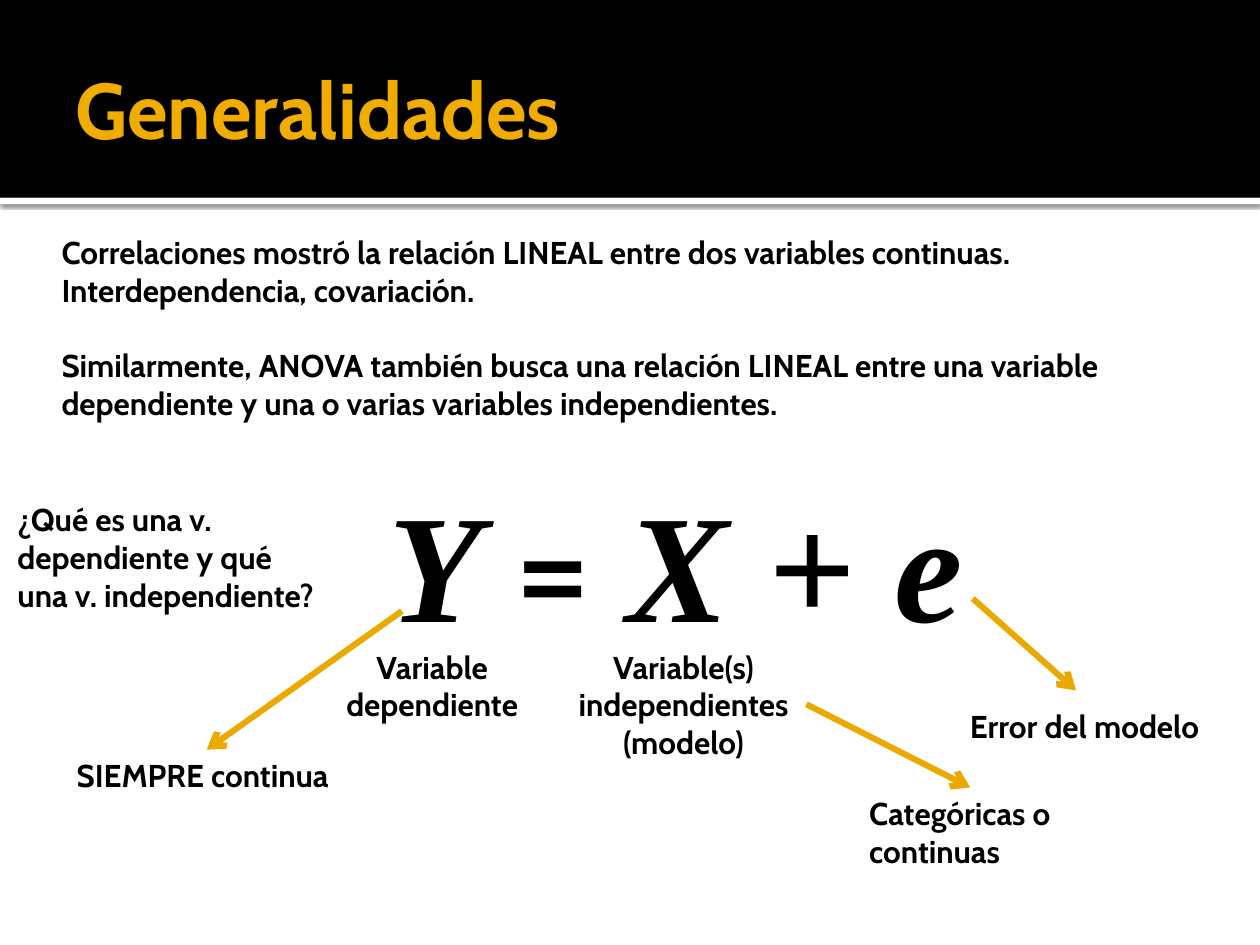
"""Build the slide on the general linear model Y = X + e."""
import lxml.etree
import pptx
import pptx.dml.color
import pptx.enum.shapes
import pptx.enum.text
import pptx.oxml
import pptx.oxml.ns
import pptx.util

Inches = pptx.util.Inches
Pt = pptx.util.Pt
LEFT = pptx.enum.text.PP_ALIGN.LEFT
CENTER = pptx.enum.text.PP_ALIGN.CENTER
BODY = {"name": "Cabin", "size": Pt(18), "bold": True}
TITLE = {**BODY, "size": Pt(45)}
SYMBOL = {"name": "Times New Roman", "size": Pt(88), "bold": True, "italic": True}
EQUALS = {"name": "Cabin", "size": Pt(88), "bold": False, "italic": False}


def color(value):
    return pptx.dml.color.RGBColor.from_string(value)


def add_text(box, paragraphs, alignment=LEFT, text_color="000000", gaps=()):
    shape = slide.shapes.add_textbox(*map(Inches, box))
    frame = shape.text_frame
    frame.word_wrap = True
    for index, runs in enumerate(paragraphs):
        paragraph = frame.add_paragraph() if index else frame.paragraphs[0]
        paragraph.alignment = alignment
        if index in gaps:
            paragraph.space_before = Pt(21.5)
        for text, formats in runs:
            run = paragraph.add_run()
            run.text = text
            run.font.color.rgb = color(text_color)
            for name, value in formats.items():
                setattr(run.font, name, value)
    return frame


presentation = pptx.Presentation()
presentation.slide_width = Inches(10)
presentation.slide_height = Inches(7.5)
slide = presentation.slides.add_slide(presentation.slide_layouts[6])

for top, height, fill in [(1.57, 0.05, "FFFFFF"), (0, 1.57, "000000")]:
    band = slide.shapes.add_shape(
        pptx.enum.shapes.MSO_SHAPE.RECTANGLE, 0, Inches(top), Inches(10), Inches(height)
    )
    band.shadow.inherit = False
    band.fill.solid()
    band.fill.fore_color.rgb = color(fill)
    band.line.fill.background()
    if fill == "FFFFFF":
        effects = band._element.spPr.find(pptx.oxml.ns.qn("a:effectLst"))
        effects.append(pptx.oxml.parse_xml(
            f'<a:outerShdw {pptx.oxml.ns.nsdecls("a")} blurRad="{Pt(2.5)}" '
            f'dist="{Pt(0.8)}" dir="5400000" algn="tl" rotWithShape="0">'
            '<a:srgbClr val="000000"><a:alpha val="60000"/></a:srgbClr></a:outerShdw>'
        ))

title = add_text((0.5, 0.17, 9, 1.37), [[("Generalidades", TITLE)]], text_color="F0AD00")
title.vertical_anchor = pptx.enum.text.MSO_ANCHOR.MIDDLE
title.margin_right = Inches(0.05)

add_text((2.72, 3.67, 5.28, 1.58), [[("Y ", SYMBOL), ("= ", EQUALS), ("X + e", SYMBOL)]], CENTER)

introduction = [
    "Correlaciones mostró la relación LINEAL entre dos variables continuas.",
    "Interdependencia, covariación.",
    "Similarmente, ANOVA también busca una relación LINEAL entre una variable "
    "dependiente y una o varias variables independientes.",
]
add_text((0.39, 1.8, 9.3, 1.62), [[(line, BODY)] for line in introduction], gaps=(2,))

labels = [
    ((2.57, 5.09, 1.72, 0.71), ["Variable dependiente"], CENTER),
    ((4.45, 5.09, 1.95, 1.01), ["Variable(s) independientes (modelo)"], CENTER),
    ((0.51, 5.95, 2.27, 0.4), ["SIEMPRE continua"], LEFT),
    ((6.8, 6.25, 1.8, 0.71), ["Categóricas o", "continuas"], LEFT),
    ((0.04, 3.92, 2.58, 1.01), ["¿Qué es una v. dependiente y qué una v. independiente?"], LEFT),
    ((7.6, 5.56, 2.2, 0.4), ["Error del modelo"], LEFT),
]
for box, lines, alignment in labels:
    add_text(box, [[(line, BODY)] for line in lines], alignment)

arrows = [(3.19, 4.85, 1.64, 5.95), (6.4, 5.59, 7.7, 6.25), (7.72, 4.75, 8.54, 5.48)]
for ends in arrows:
    arrow = slide.shapes.add_connector(
        pptx.enum.shapes.MSO_CONNECTOR.STRAIGHT, *map(Inches, ends)
    )
    arrow.line.color.rgb = color("EBA900")
    arrow.line.width = Pt(3.5)
    properties = arrow._element.spPr
    outline = properties.find(pptx.oxml.ns.qn("a:ln"))
    lxml.etree.SubElement(outline, pptx.oxml.ns.qn("a:tailEnd"), type="arrow")
    lxml.etree.SubElement(properties, pptx.oxml.ns.qn("a:effectLst"))

presentation.save("out.pptx")
